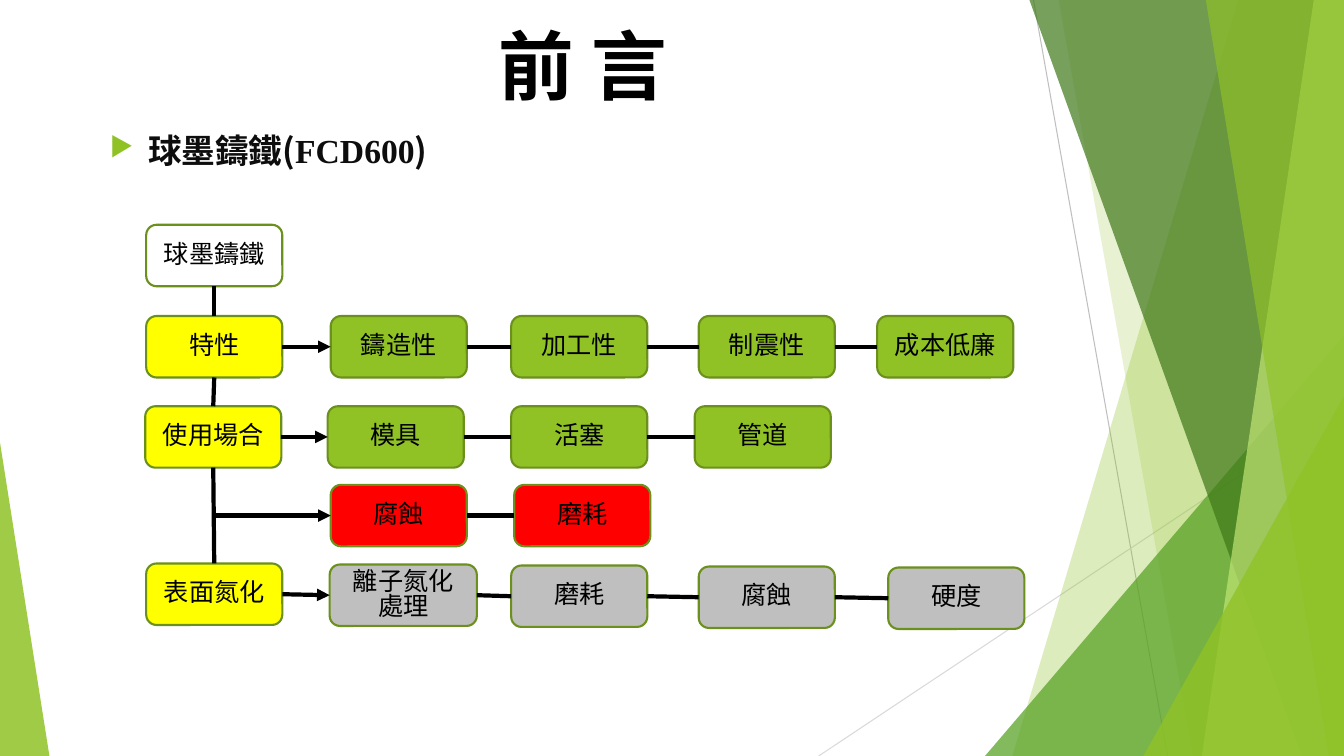
"""Build the foreword slide: a flow of ductile iron traits, uses and nitriding."""
from pptx import Presentation
from pptx import util as u
from pptx.dml.color import RGBColor
from pptx.enum import shapes, text
from pptx.oxml.ns import qn
from lxml import etree

WIDE, HIGH = 13.33, 7.5
SANS, SERIF = "Noto Sans CJK SC", "Times New Roman"
HUES = {
    "black": "000000", "ink": "0D0D0D", "white": "FFFFFF", "yellow": "FFFF00",
    "green": "90C226", "red": "FF0000", "gray": "BFBFBF", "pale": "D9D9D9",
    "edge": "6B901C", "leaf": "54A021", "deep": "3F7819", "lime": "C0E474",
}
TITLE = "前 言"
LEAD = [("球墨鑄鐵(", SANS), ("FCD600", SERIF), (")", SANS)]
RAYS = [((10.25, 0), (11.58, HIGH), "gray"), ((WIDE, 4.03), (8.12, HIGH), "pale")]
DECOR = [
    ("panel", (12.28, 10.04), "green", 30),
    ("panel", (10.5, 11.83), "green", 20),
    ("wedge", (9.77, 3.33, 3.56, 1), "leaf", 72),
    ("panel", (10.21, 12.91), "deep", 70),
    ("panel", (13.03, 11.92), "lime", 70),
    ("panel", (11.96, 13.18), "green", 65),
    ("wedge", (11.34, 3.93, 1.99, 1), "green", 80),
    ("wedge", (0, 4.39, 0.49, 0), "green", 85),
]
BOX_W, BOX_H = 1.35, 0.61
STEM = 2.12
ROWS = [
    (2.23, 0, "white", [(1.45, "球墨鑄鐵")], True),
    (3.135, 0, "green", [(1.45, "特性"), (3.28, "鑄造性"), (5.07, "加工性"),
                         (6.93, "制震性"), (8.7, "成本低廉")], True),
    (4.03, 0, "green", [(1.44, "使用場合"), (3.25, "模具"), (5.07, "活塞"),
                        (6.89, "管道")], True),
    (4.81, 0, "red", [(3.28, "腐蝕"), (5.1, "磨耗")], False),
    (5.59, 0.01, "gray", [(1.45, "表面氮化"), (3.27, "離子氮化處理"), (5.07, "磨耗"),
                          (6.93, "腐蝕"), (8.81, "硬度")], True),
]
BROAD = {"離子氮化處理": 1.46}

deck = Presentation()
deck.slide_width, deck.slide_height = u.Inches(WIDE), u.Inches(HIGH)
slide = deck.slides.add_slide(deck.slide_layouts[5])
tree = slide.shapes


def inch(*vals):
    return [u.Inches(v) for v in vals]


def tint(name):
    return RGBColor.from_string(HUES[name])


def write(para, words, size, hue="black", bold=False, face=SANS):
    run = para.add_run()
    run.text = words
    font = run.font
    font.size, font.bold, font.name = u.Pt(size), bold, face
    font.color.rgb = tint(hue)
    etree.SubElement(run._r.get_or_add_rPr(), qn("a:ea")).set("typeface", face)


def paint(shape, hue, alpha=100):
    shape.shadow.inherit = False
    shape.fill.solid()
    shape.fill.fore_color.rgb = tint(hue)
    if alpha < 100:
        tone = shape.fill._xPr.find(".//" + qn("a:srgbClr"))
        etree.SubElement(tone, qn("a:alpha")).set("val", str(alpha * 1000))


def link(start, end, hue="black", width=3, arrow=False):
    line = tree.add_connector(shapes.MSO_CONNECTOR.STRAIGHT, *inch(*start, *end))
    line.line.color.rgb = tint(hue)
    line.line.width = u.Pt(width)
    if arrow:
        etree.SubElement(line.line._get_or_add_ln(), qn("a:tailEnd")).set("type", "triangle")
    etree.SubElement(line._element.spPr, qn("a:effectLst"))
    return line


def join(one, two, out, into, arrow=False):
    line = link((0, 0), (1, 1), arrow=arrow)
    line.begin_connect(one, out)
    line.end_connect(two, into)


def panel(top, base):
    form = tree.build_freeform(*inch(top, 0), 1.0)
    form.add_line_segments([inch(WIDE, 0), inch(WIDE, HIGH), inch(base, HIGH)])
    return form.convert_to_shape()


def wedge(left, top, wide, peak):
    shape = tree.add_shape(shapes.MSO_SHAPE.ISOSCELES_TRIANGLE,
                           *inch(left, top, wide, HIGH - top))
    shape.adjustments[0] = peak
    return shape


def node(left, top, words, hue):
    shape = tree.add_shape(shapes.MSO_SHAPE.FLOWCHART_ALTERNATE_PROCESS,
                           *inch(left, top, BROAD.get(words, BOX_W), BOX_H))
    paint(shape, hue)
    shape.line.color.rgb = tint("edge")
    shape.line.width = u.Pt(1.5)
    frame = shape.text_frame
    frame.word_wrap = True
    frame.vertical_anchor = text.MSO_ANCHOR.MIDDLE
    para = frame.paragraphs[0]
    para.alignment = text.PP_ALIGN.CENTER
    para.line_spacing = 0.85
    write(para, words, 18)
    return shape


for start, end, hue in RAYS:
    link(start, end, hue, 0.75)
for kind, geom, hue, alpha in DECOR:
    shape = {"panel": panel, "wedge": wedge}[kind](*geom)
    paint(shape, hue, alpha)
    shape.line.fill.background()

title = tree.title
title.left, title.top, title.width, title.height = inch(1.08, 0.24, 9.4, 0.75)
frame = title.text_frame
frame.auto_size = text.MSO_AUTO_SIZE.NONE
frame.vertical_anchor = text.MSO_ANCHOR.TOP
para = frame.paragraphs[0]
para.alignment = text.PP_ALIGN.CENTER
para.line_spacing = 0.9
write(para, TITLE, 54, bold=True)

lead = tree.add_textbox(*inch(0.99, 1.28, 11.12, 5.55))
lead.text_frame.word_wrap = True
para = lead.text_frame.paragraphs[0]
para.line_spacing = 0.9
props = para._p.get_or_add_pPr()
props.set("marL", str(u.Inches(0.38)))
props.set("indent", str(u.Inches(-0.38)))
tone = etree.SubElement(props, qn("a:buClr"))
etree.SubElement(tone, qn("a:srgbClr")).set("val", HUES["green"])
etree.SubElement(props, qn("a:buSzPct")).set("val", "80000")
etree.SubElement(props, qn("a:buChar")).set("char", "▶")
for words, face in LEAD:
    write(para, words, 24, "ink", True, face)

heads = []
for top, step, hue, items, headed in ROWS:
    nodes = []
    for i, (left, words) in enumerate(items):
        fill = "yellow" if headed and i == 0 and len(items) > 1 else hue
        nodes.append(node(left, top + step * i, words, fill))
    for i, (one, two) in enumerate(zip(nodes, nodes[1:])):
        join(one, two, 3, 1, arrow=headed and i == 0)
    if headed:
        heads.append(nodes[0])
    else:
        mid = top + BOX_H / 2
        link((STEM, mid), (items[0][0], mid), arrow=True).end_connect(nodes[0], 1)
for one, two in zip(heads, heads[1:]):
    join(one, two, 2, 0)

deck.save("out.pptx")
